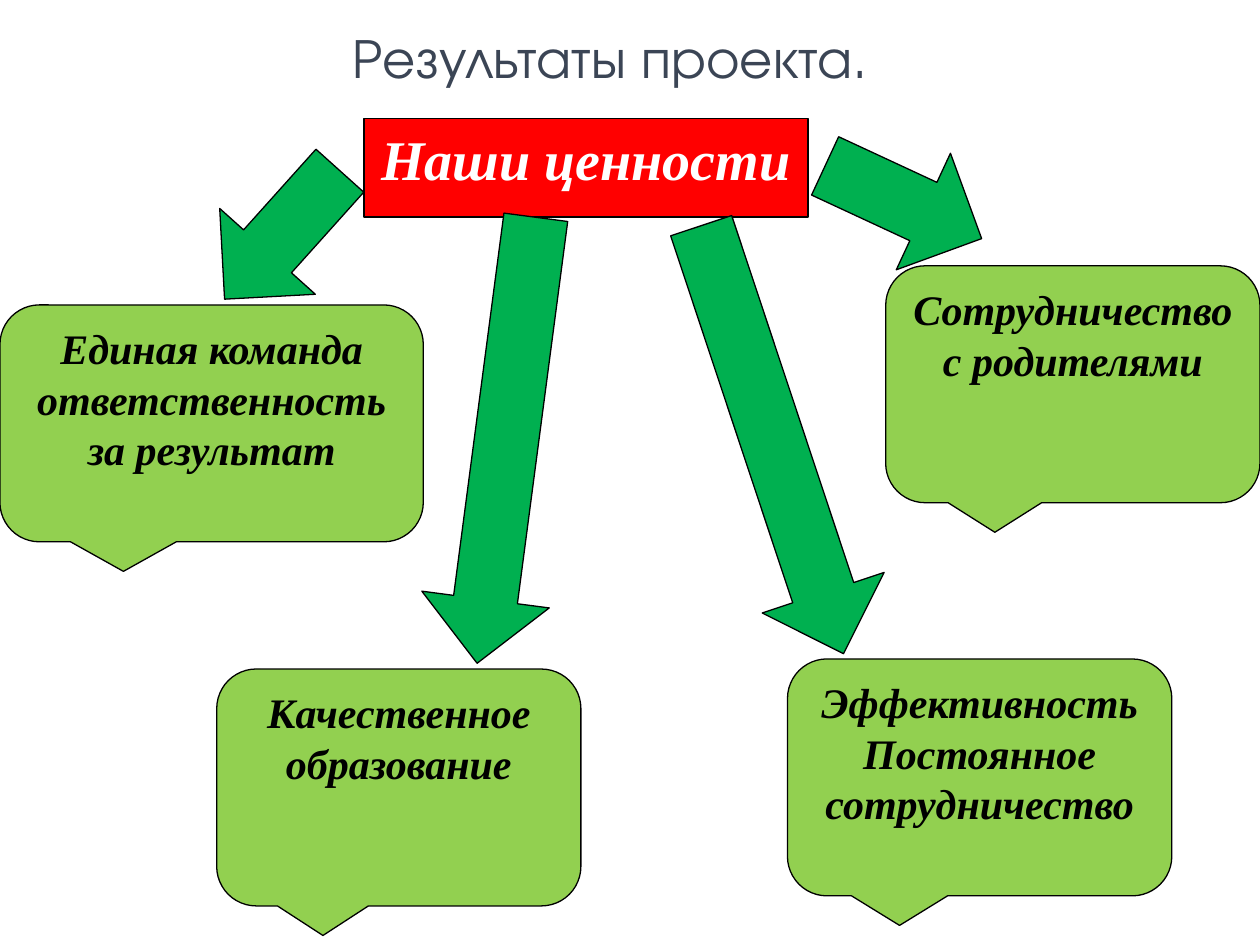
from dataclasses import dataclass

from pptx import Presentation
from pptx.dml.color import RGBColor
from pptx.enum.shapes import MSO_SHAPE
from pptx.enum.text import MSO_ANCHOR, PP_ALIGN
from pptx.util import Inches, Pt

WHITE = RGBColor(0xFF, 0xFF, 0xFF)
BLACK = RGBColor(0x00, 0x00, 0x00)
SLATE = RGBColor(0x3B, 0x45, 0x55)
RED = RGBColor(0xFF, 0x00, 0x00)
LIME = RGBColor(0x92, 0xD0, 0x50)
GREEN = RGBColor(0x00, 0xB0, 0x50)

TITLE_FONT = "TeX Gyre Adventor"
BODY_FONT = "Times New Roman"
CALLOUT_HEIGHT = 1.88
ARROW_WIDTH = 1.02


@dataclass(frozen=True)
class Value:
    left: float
    top: float
    width: float
    lines: tuple[str, ...]


@dataclass(frozen=True)
class Arrow:
    left: float
    top: float
    length: float
    rotation: float


VALUES = (
    Value(7.03, 2.11, 2.97, ("Сотрудничество с родителями",)),
    Value(0, 2.42, 3.36, ("Единая команда ответственность за результат",)),
    Value(1.72, 5.31, 2.89, ("Качественное образование",)),
    Value(6.25, 5.23, 3.05, ("Эффективность", "Постоянное сотрудничество")),
)

ARROWS = (
    Arrow(1.73, 1.18, 1.37, 41.9),
    Arrow(5.62, 1.7, 3.58, 341.6),
    Arrow(3.51, 1.71, 3.57, 7.5),
    Arrow(6.66, 0.92, 1.37, 294.9),
)


def write_lines(shape, lines: tuple[str, ...], font_name: str, size: float,
                color: RGBColor, emphasis: bool, wrap: bool = True) -> None:
    frame = shape.text_frame
    frame.word_wrap = wrap
    frame.vertical_anchor = MSO_ANCHOR.TOP
    frame.text = "\n".join(lines)
    for paragraph in frame.paragraphs:
        paragraph.alignment = PP_ALIGN.CENTER
        paragraph.font.name = font_name
        paragraph.font.size = Pt(size)
        paragraph.font.color.rgb = color
        paragraph.font.bold = emphasis
        paragraph.font.italic = emphasis


def add_figure(slide, kind: MSO_SHAPE, left: float, top: float, width: float,
               height: float, fill: RGBColor, line_width: float = 0.75):
    shape = slide.shapes.add_shape(
        kind, Inches(left), Inches(top), Inches(width), Inches(height))
    shape.shadow.inherit = False
    shape.fill.solid()
    shape.fill.fore_color.rgb = fill
    shape.line.color.rgb = BLACK
    shape.line.width = Pt(line_width)
    return shape


def add_title(slide) -> None:
    title = slide.shapes.add_textbox(
        Inches(2.62), Inches(0.13), Inches(4.45), Inches(1.18))
    write_lines(title, ("Результаты проекта.",), TITLE_FONT, 32, SLATE,
                emphasis=False, wrap=False)


def add_heading(slide) -> None:
    heading = add_figure(slide, MSO_SHAPE.RECTANGLE, 2.89, 0.94, 3.52, 0.78, RED, 1)
    write_lines(heading, ("Наши ценности",), BODY_FONT, 32, WHITE, emphasis=True)


def add_value(slide, value: Value) -> None:
    callout = add_figure(slide, MSO_SHAPE.ROUNDED_RECTANGULAR_CALLOUT, value.left,
                         value.top, value.width, CALLOUT_HEIGHT, LIME)
    write_lines(callout, value.lines, BODY_FONT, 24, BLACK, emphasis=True)


def add_arrow(slide, arrow: Arrow) -> None:
    shape = add_figure(slide, MSO_SHAPE.DOWN_ARROW, arrow.left, arrow.top,
                       ARROW_WIDTH, arrow.length, GREEN)
    shape.rotation = arrow.rotation


def main() -> None:
    presentation = Presentation()
    presentation.slide_width = Inches(10)
    presentation.slide_height = Inches(7.5)
    slide = presentation.slides.add_slide(presentation.slide_layouts[6])
    add_title(slide)
    add_heading(slide)
    for value in VALUES:
        add_value(slide, value)
    for arrow in ARROWS:
        add_arrow(slide, arrow)
    presentation.save("out.pptx")


if __name__ == "__main__":
    main()
